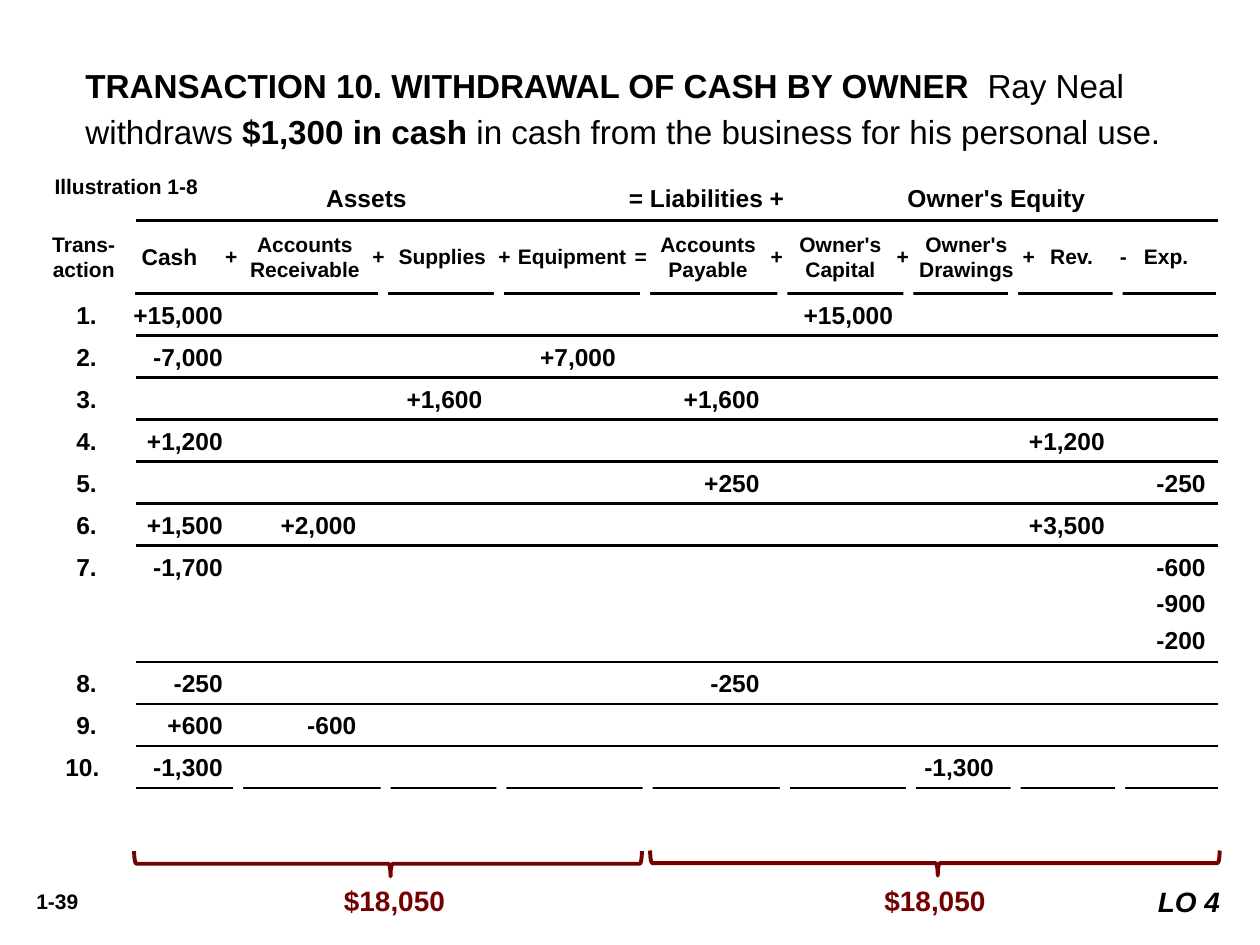
from lxml.etree import SubElement
from pptx import Presentation
from pptx.dml.color import RGBColor
from pptx.enum.shapes import MSO_CONNECTOR as CONN, MSO_SHAPE as SHAPE
from pptx.enum.text import MSO_ANCHOR as ANCHOR, PP_ALIGN as ALIGN
from pptx.oxml.ns import qn
from pptx.util import Inches, Pt

COLORS = {"ink": "000000", "paper": "FFFFFF", "total": "740000"}
STOPS = {"no": 0.25, "cash": 1.25, "receivable": 2.31, "supplies": 3.31,
         "equipment": 4.37, "payable": 5.51, "capital": 6.57,
         "drawings": 7.37, "revenue": 8.25, "expense": 9.05}
TRANSACTIONS = [
    dict(cash="+15,000", capital="+15,000"),
    dict(cash="-7,000", equipment="+7,000"),
    dict(supplies="+1,600", payable="+1,600"),
    dict(cash="+1,200", revenue="+1,200"),
    dict(payable="+250", expense="-250"),
    dict(cash="+1,500", receivable="+2,000", revenue="+3,500"),
    dict(cash="-1,700", expense="-600"),
    dict(cash="-250", payable="-250"),
    dict(cash="+600", receivable="-600"),
    dict(cash="-1,300", drawings="-1,300"),
]
MORE_EXPENSES = {7: ["-900", "-200"]}
HEADINGS = [("Trans-\naction", 0.25, 0.83), ("Cash", 0.93, 0.83),
            ("Accounts\nReceivable", 1.92, 1), ("Supplies", 3.12, 0.78),
            ("Equipment", 4, 1.08), ("Accounts\nPayable", 5.08, 1.08),
            ("Owner's Capital", 6.17, 1), ("Owner's Drawings", 7.17, 1),
            ("Rev.", 8.17, 0.67), ("Exp.", 8.92, 0.67)]
SIGNS = [("+", 1.75), ("+", 2.92), ("+", 3.92), ("=", 5),
         ("+", 6.08), ("+", 7.08), ("+", 8.08), ("-", 8.83)]
GAPS = [3, 3.92, 5.08, 6.17, 7.17, 8, 8.83]
ROW_TOP, ROW_STEP = 2.33, 1 / 3
EXTRA_HEIGHT = 0.59


def color(name):
    return RGBColor.from_string(COLORS[name])


def write(p, text, size=12, bold=True, italic=False, ink="ink", font="Arial",
          align=ALIGN.LEFT, tabs=(), before=0, spacing=None):
    p.alignment = align
    p.space_before = Pt(before)
    if spacing:
        p.line_spacing = spacing
    if tabs:
        stops = SubElement(p._p.get_or_add_pPr(), qn("a:tabLst"))
        for pos, kind in tabs:
            SubElement(stops, qn("a:tab"), pos=str(Inches(pos)), algn=kind)
    r = p.add_run()
    r.text = text
    r.font.name, r.font.size = font, Pt(size)
    r.font.bold, r.font.italic = bold, italic
    r.font.color.rgb = color(ink)


class Sheet:
    def __init__(self, s, rule=1.5, brace=2.25):
        self.s, self.rule, self.brace_width = s, rule, brace

    def frame(self, x, y, w, h, side=0.1, anchor=ANCHOR.TOP):
        sp = self.s.shapes.add_textbox(Inches(x), Inches(y), Inches(w), Inches(h))
        tf = sp.text_frame
        tf.word_wrap, tf.vertical_anchor = True, anchor
        tf.margin_left = tf.margin_right = Inches(side)
        return tf

    def text(self, text, x, y, w, h, side=0.1, anchor=ANCHOR.TOP, **fmt):
        tf = self.frame(x, y, w, h, side, anchor)
        for i, line in enumerate(text.split("\n")):
            write(tf.add_paragraph() if i else tf.paragraphs[0], line, **fmt)

    def row(self, y, h, lines):
        tf = self.frame(0.42, y, 9.42, h)
        for i, cells in enumerate(lines):
            write(tf.add_paragraph() if i else tf.paragraphs[0],
                  "".join("\t" + value for value in cells.values()), size=14,
                  before=4 if i else 0, tabs=[(STOPS[c], "r") for c in cells])

    def line(self, y, x1=1.08, x2=9.67):
        c = self.s.shapes.add_connector(
            CONN.STRAIGHT, Inches(x1), Inches(y), Inches(x2), Inches(y))
        c.line.color.rgb, c.line.width = color("ink"), Pt(self.rule)
        SubElement(c._element.spPr, qn("a:effectLst"))

    def gap(self, x, y):
        sp = self.s.shapes.add_shape(
            SHAPE.RECTANGLE, Inches(x), Inches(y), Inches(0.08), Inches(0.17))
        sp.shadow.inherit = False
        sp.fill.solid()
        sp.fill.fore_color.rgb = color("paper")
        sp.line.fill.background()

    def brace(self, x, y, w, h):
        sp = self.s.shapes.add_shape(
            SHAPE.LEFT_BRACE, Inches(x), Inches(y), Inches(w), Inches(h))
        sp.shadow.inherit = False
        sp.rotation = 270
        sp.adjustments[0], sp.adjustments[1] = 0.083, 0.505
        sp.fill.background()
        sp.line.color.rgb, sp.line.width = color("total"), Pt(self.brace_width)


def main():
    prs = Presentation()
    prs.slide_width, prs.slide_height = Inches(10), Inches(7.5)
    sheet = Sheet(prs.slides.add_slide(prs.slide_layouts[6]))

    title = sheet.frame(0.58, 0.42, 8.92, 0.84).paragraphs[0]
    for text, bold in [("TRANSACTION 10. WITHDRAWAL OF CASH BY OWNER  ", True),
                       ("Ray Neal withdraws ", False),
                       ("$1,300 in cash ", True),
                       ("in cash from the business for his personal use.", False)]:
        write(title, text, size=19, bold=bold, spacing=1.15)
    sheet.text("Illustration 1-8", 0.25, 1.33, 1.42, 0.3, align=ALIGN.RIGHT)

    sheet.text("\tAssets\t= Liabilities +\tOwner's Equity", 1, 1.42, 8.67, 0.29,
               anchor=ANCHOR.MIDDLE, size=14,
               tabs=[(1.81, "ctr"), (4.51, "ctr"), (6.81, "ctr")])
    sheet.line(1.75)
    for text, x, w in HEADINGS:
        sheet.text(text, x, 1.75, w, 0.57, side=0, anchor=ANCHOR.MIDDLE,
                   align=ALIGN.CENTER, size=13 if text == "Cash" else 12)
    for sign, x in SIGNS:
        sheet.text(sign, x, 1.75, 0.17, 0.57, side=0, anchor=ANCHOR.MIDDLE,
                   align=ALIGN.CENTER)
    sheet.line(ROW_TOP, 1.07, 9.65)
    for x in GAPS:
        sheet.gap(x, 2.25)

    y = ROW_TOP
    for no, cells in enumerate(TRANSACTIONS, 1):
        more = [{"expense": value} for value in MORE_EXPENSES.get(no, [])]
        h = ROW_STEP + (EXTRA_HEIGHT if more else 0)
        sheet.row(y, h, [{"no": f"{no}.", **cells}, *more])
        y += h
        sheet.line(y)
    for x in [1.83, *GAPS]:
        sheet.gap(x + 0.02, 6.17)

    for brace_x, brace_y, length, x, w in [(2.98, 4.84, 4.03, 2.42, 1.42),
                                           (7.32, 4.59, 4.52, 6.67, 1.5)]:
        sheet.brace(brace_x, brace_y, 0.2, length)
        sheet.text("$18,050", x, 6.96, w, 0.37, size=16, ink="total",
                   align=ALIGN.CENTER)
    sheet.text("1-39", 0.08, 7, 0.75, 0.3, align=ALIGN.CENTER)
    sheet.text("LO 4", 9, 6.97, 0.78, 0.37, size=16, italic=True,
               align=ALIGN.RIGHT)
    prs.save("out.pptx")


if __name__ == "__main__":
    main()
